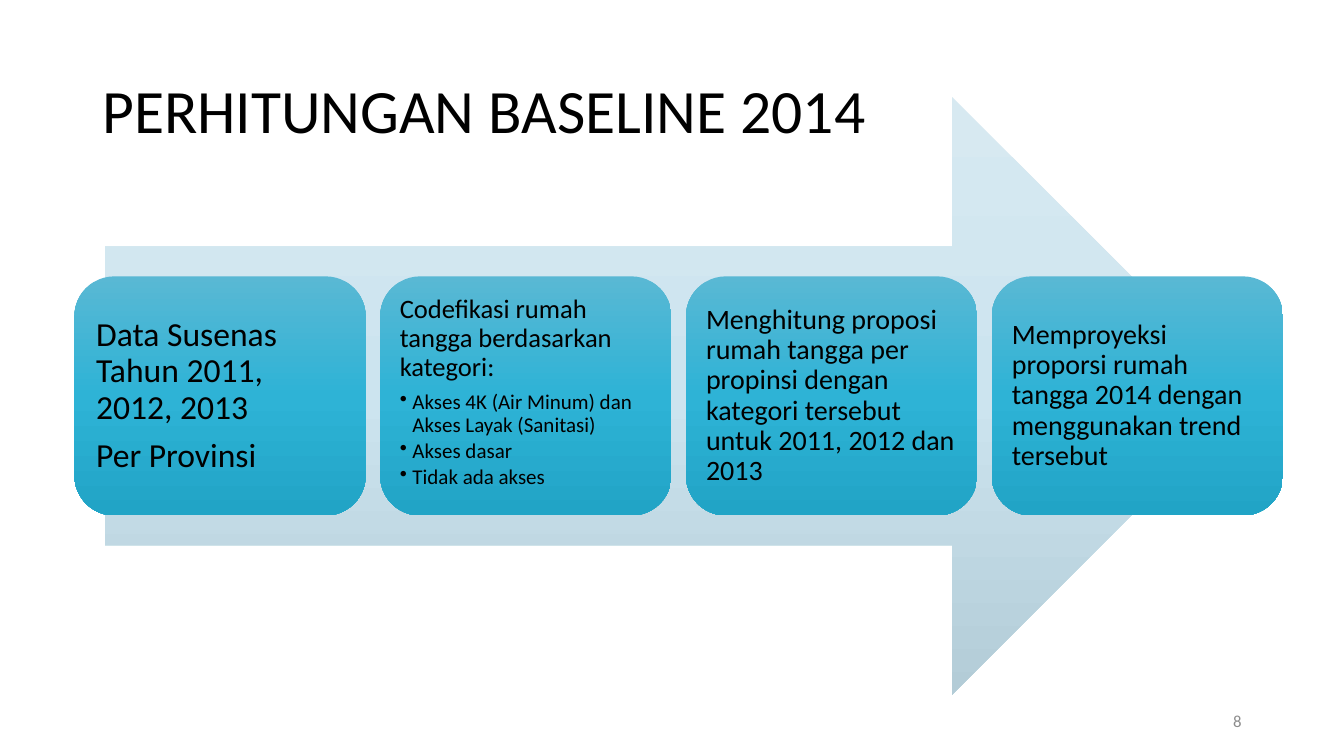
from copy import deepcopy

from lxml import etree
from pptx import Presentation
from pptx.dml.color import RGBColor
from pptx.enum import shapes, text
from pptx.oxml import ns
from pptx.util import Pt

BLACK = RGBColor(0x00, 0x00, 0x00)
GRAY = RGBColor(0x8C, 0x8C, 0x8C)
ARROW_COLORS = (RGBColor(0xD7, 0xE9, 0xF1), RGBColor(0xCC, 0xE4, 0xEF), RGBColor(0xB3, 0xCC, 0xD7))
STEP_COLORS = (RGBColor(0x59, 0xB8, 0xD4), RGBColor(0x2E, 0xB3, 0xD6), RGBColor(0x21, 0xA4, 0xC6))

# Step cards: left edge of the first one, distance between left edges, size
STEP_LEFT, STEP_PITCH = 53.2, 218.4
STEP_TOP, STEP_WIDTH, STEP_HEIGHT = 197.4, 208, 170.8
BULLET_SIZE, BULLET_INDENT = 15, 9

# Font size, paragraphs, bullets, vertical anchor
STEPS = [
    (24, ["Data Susenas Tahun 2011, 2012, 2013", "Per Provinsi"], [], text.MSO_ANCHOR.MIDDLE),
    (19, ["Codefikasi rumah tangga berdasarkan kategori:"],
     ["Akses 4K (Air Minum) dan Akses Layak (Sanitasi)", "Akses dasar", "Tidak ada akses"],
     text.MSO_ANCHOR.TOP),
    (20, ["Menghitung proposi rumah tangga per propinsi dengan kategori tersebut "
          "untuk 2011, 2012 dan 2013"], [], text.MSO_ANCHOR.MIDDLE),
    (20, ["Memproyeksi proporsi rumah tangga 2014 dengan menggunakan trend tersebut"],
     [], text.MSO_ANCHOR.MIDDLE),
]


class SlideBuilder:
    font = "Calibri"

    def __init__(self, slide):
        self.slide = slide

    def format_paragraph(self, para, size, color=BLACK, align=text.PP_ALIGN.LEFT,
                         spacing=0.9, after=0):
        para.alignment = align
        para.line_spacing = spacing
        para.space_after = Pt(after)
        for span in para.runs:
            span.font.name = self.font
            span.font.size = Pt(size)
            span.font.color.rgb = color

    def label(self, words, left, top, width, height, size, **style):
        box = self.slide.shapes.add_textbox(Pt(left), Pt(top), Pt(width), Pt(height))
        frame = box.text_frame
        frame.word_wrap = True
        frame.vertical_anchor = text.MSO_ANCHOR.MIDDLE
        frame.text = words
        self.format_paragraph(frame.paragraphs[0], size, **style)

    def gradient_shape(self, kind, left, top, width, height, colors):
        shape = self.slide.shapes.add_shape(kind, Pt(left), Pt(top), Pt(width), Pt(height))
        shape.shadow.inherit = False
        shape.line.fill.background()
        shape.fill.gradient()
        shape.fill.gradient_angle = 270
        # A new gradient has two stops; add the middle one
        stops = shape._element.spPr.find(".//" + ns.qn("a:gsLst"))
        stops.insert(1, deepcopy(stops[0]))
        for stop, position, color in zip(shape.fill.gradient_stops, (0, 0.5, 1), colors):
            stop.position = position
            stop.color.rgb = color
        return shape

    def add_bullet(self, para):
        props = para._p.get_or_add_pPr()
        props.set("marL", str(Pt(BULLET_INDENT)))
        props.set("indent", str(-Pt(BULLET_INDENT)))
        etree.SubElement(props, ns.qn("a:buChar")).set("char", "•")

    def step(self, index, size, paragraphs, bullets, anchor):
        card = self.gradient_shape(shapes.MSO_SHAPE.ROUNDED_RECTANGLE,
                                   STEP_LEFT + index * STEP_PITCH, STEP_TOP,
                                   STEP_WIDTH, STEP_HEIGHT, STEP_COLORS)
        frame = card.text_frame
        frame.word_wrap = True
        frame.vertical_anchor = anchor
        # Insets and paragraph gaps follow the font size
        inset = Pt(0.3 * size)
        frame.margin_left = frame.margin_right = inset
        frame.margin_top = frame.margin_bottom = inset
        frame.text = "\n".join(paragraphs + bullets)
        for number, para in enumerate(frame.paragraphs):
            if number < len(paragraphs):
                self.format_paragraph(para, size, after=0.35 * size)
            else:
                para.level = 1
                self.format_paragraph(para, BULLET_SIZE, after=0.15 * BULLET_SIZE)
                self.add_bullet(para)


def main():
    deck = Presentation()
    deck.slide_width, deck.slide_height = Pt(960), Pt(540)
    page = SlideBuilder(deck.slides.add_slide(deck.slide_layouts[6]))

    # Title
    page.label("PERHITUNGAN BASELINE 2014", 66, 28.8, 828, 104.4, 44)

    # Background arrow with the four steps on it
    page.gradient_shape(shapes.MSO_SHAPE.RIGHT_ARROW, 75, 69.2, 818.6, 427, ARROW_COLORS)
    for index, step in enumerate(STEPS):
        page.step(index, *step)

    # Slide number
    page.label("8", 678, 500.4, 216, 28.8, 12, color=GRAY,
               align=text.PP_ALIGN.RIGHT, spacing=1.0)

    deck.save("out.pptx")


if __name__ == "__main__":
    main()
